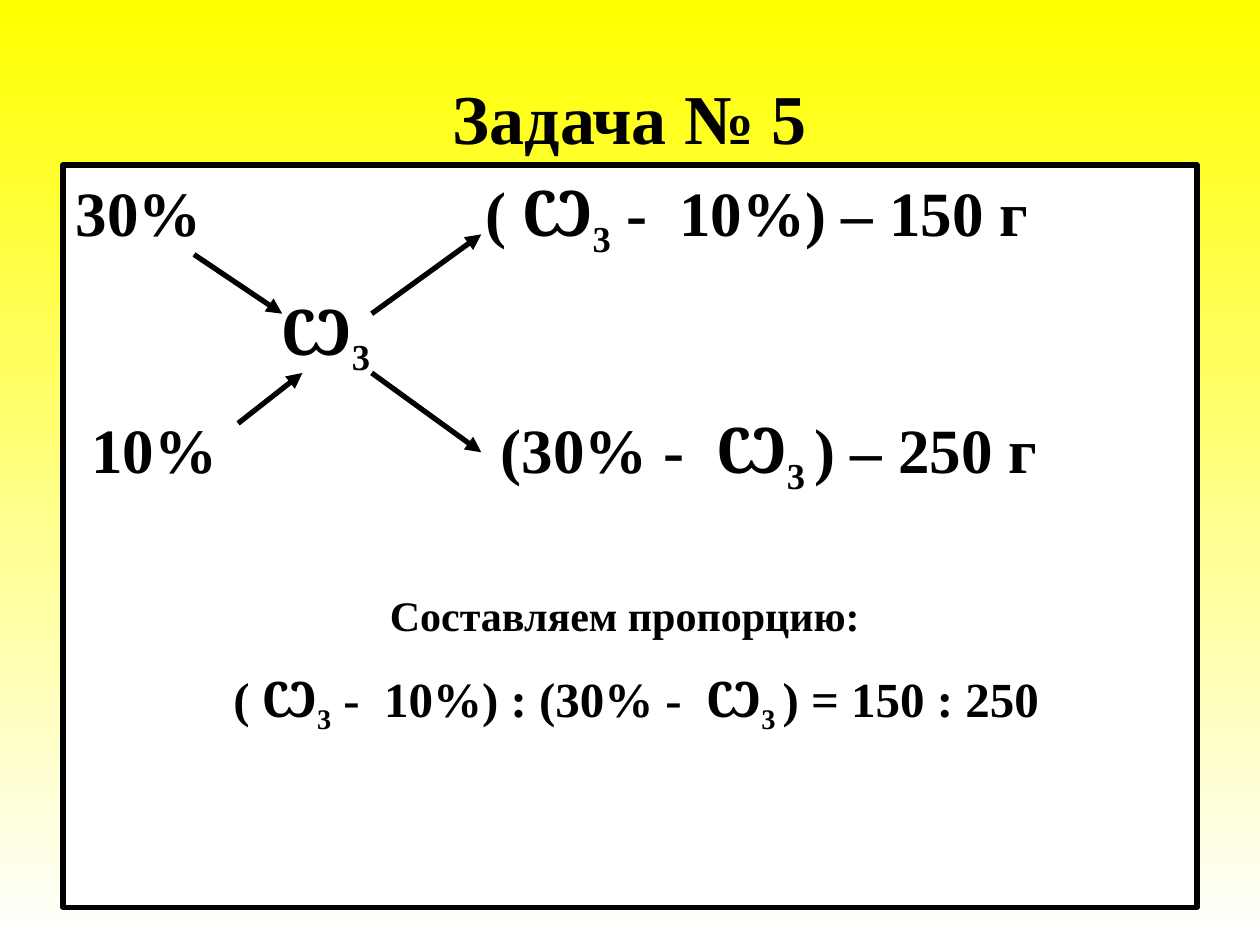
import pptx
import pptx.dml.color
import pptx.enum.dml
import pptx.enum.shapes
import pptx.enum.text
import pptx.oxml
import pptx.oxml.ns
import pptx.util
import lxml.etree

Inches = pptx.util.Inches
Pt = pptx.util.Pt
ALIGN = pptx.enum.text.PP_ALIGN
ANCHOR = pptx.enum.text.MSO_ANCHOR


def color(code):
    return pptx.dml.color.RGBColor.from_string(code)


def child(parent, tag, **attrs):
    node = lxml.etree.SubElement(parent, pptx.oxml.ns.qn(tag))
    for name, value in attrs.items():
        node.set(name, value)


def place(shape, left, top, width, height):
    shape.left, shape.top = Inches(left), Inches(top)
    shape.width, shape.height = Inches(width), Inches(height)


def style(run, size):
    run.font.name = "Times New Roman"
    run.font.size = Pt(size)
    run.font.bold = True
    run.font.color.rgb = color("000000")


def paint(slide):
    fill = slide.background.fill
    fill.gradient()
    fill.gradient_angle = 270
    for stop, code, spot in zip(fill.gradient_stops, ("FFFF00", "FFFFFF"), (0, 1)):
        stop.color.rgb = color(code)
        stop.position = spot


def head(slide, text):
    title = slide.shapes.title
    place(title, 0.5, 0.3, 9, 1.25)
    frame = title.text_frame
    frame.text = text
    frame.vertical_anchor = ANCHOR.MIDDLE
    frame.paragraphs[0].alignment = ALIGN.CENTER
    style(frame.paragraphs[0].runs[0], 40)


def panel(slide):
    body = slide.placeholders[1]
    place(body, 0.5, 1.31, 9, 5.89)
    body.fill.solid()
    body.fill.fore_color.rgb = color("FFFFFF")
    body.line.color.rgb = color("000000")
    body.line.width = Pt(3)
    frame = body.text_frame
    frame.auto_size = pptx.enum.text.MSO_AUTO_SIZE.NONE
    frame.vertical_anchor = ANCHOR.TOP
    frame.margin_top = Inches(0.02)
    return frame


def row(para, parts, size, before, align, left=0):
    para.alignment = align
    para.line_spacing = 1.07
    para.space_before, para.space_after = Pt(before), Pt(8)
    props = para._p.get_or_add_pPr()
    props.set("marL", str(int(Inches(left))))
    props.set("indent", "0")
    child(props, "a:buNone")
    for part in parts:
        run = para.add_run()
        run.text = part
        style(run, size)
        if part.strip() == "3":
            run._r.get_or_add_rPr().set("baseline", "-25000")
        elif part == " ":
            run._r.get_or_add_rPr().set("spc", "15300")


def arrow(slide, start, end):
    points = [Inches(value) for value in start + end]
    line = slide.shapes.add_connector(pptx.enum.shapes.MSO_CONNECTOR.STRAIGHT, *points)
    line.line.color.rgb = color("000000")
    line.line.width = Pt(3)
    child(line.line._get_or_add_ln(), "a:tailEnd", type="triangle")
    child(line._element.spPr, "a:effectLst")


def main():
    deck = pptx.Presentation()
    deck.slide_width, deck.slide_height = Inches(10), Inches(7.5)
    slide = deck.slides.add_slide(deck.slide_layouts[1])
    paint(slide)
    head(slide, "Задача № 5")

    rows = [
        (["30%", " ", "( Ꙍ", "3", " -  10%) – 150 г"], 36, 7.2, ALIGN.LEFT),
        (["Ꙍ", "3"], 36, 7.2, ALIGN.LEFT, 1.63),
        ([" 10%", " ", "(30% -  Ꙍ", "3 ", ") – 250 г"], 36, 7.2, ALIGN.LEFT),
        (["Составляем пропорцию: "], 24, 43, ALIGN.CENTER),
        ([" ( Ꙍ", "3", " -  10%) : (30% -  Ꙍ", "3 ", ") = 150 : 250"], 28, 5.6, ALIGN.CENTER),
    ]
    frame = panel(slide)
    for index, item in enumerate(rows):
        para = frame.add_paragraph() if index else frame.paragraphs[0]
        row(para, *item)

    arrows = [
        ((1.54, 2.02), (2.24, 2.49)),
        ((1.89, 3.36), (2.4, 2.96)),
        ((2.95, 2.49), (3.82, 1.86)),
        ((2.95, 2.96), (3.82, 3.59)),
    ]
    for start, end in arrows:
        arrow(slide, start, end)
    deck.save("out.pptx")


if __name__ == "__main__":
    main()
